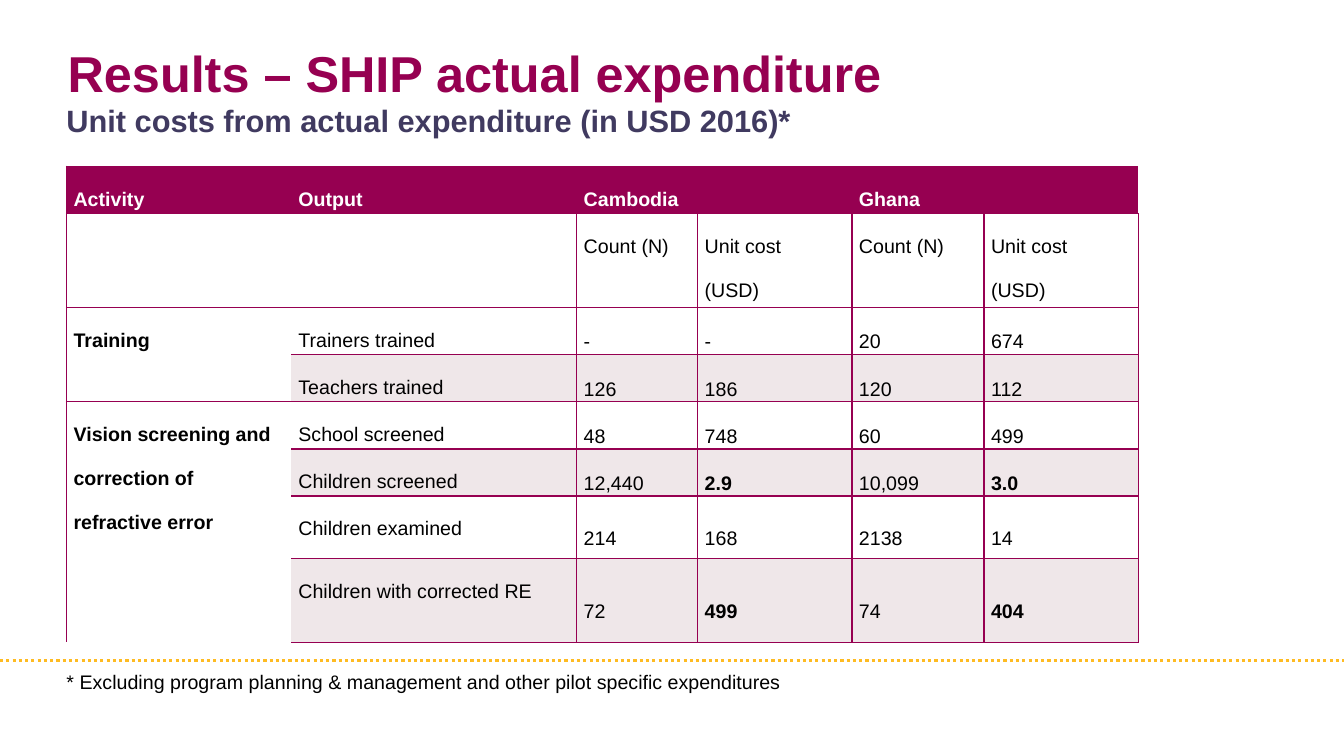
from pptx import Presentation
from pptx.dml.color import RGBColor
from pptx.enum.dml import MSO_LINE
from pptx.enum.shapes import MSO_CONNECTOR
from pptx.enum.text import MSO_ANCHOR as ANCHOR, PP_ALIGN
from pptx.oxml import parse_xml
from pptx.oxml.ns import nsdecls
from pptx.util import Inches, Pt

PLUM, WHITE, BLACK, PINK = "960051", "FFFFFF", "000000", "EFE7E9"


def rgb(value):
    return RGBColor.from_string(value)


def write(tf, text, size, color, bold=False, spacing=None):
    tf.word_wrap = True
    tf.text = text
    for p in tf.paragraphs:
        p.alignment = PP_ALIGN.LEFT
        p.line_spacing = spacing
        for r in p.runs:
            for name, value in {"name": "Arial", "size": Pt(size), "bold": bold}.items():
                setattr(r.font, name, value)
            r.font.color.rgb = rgb(color)


prs = Presentation()
prs.slide_width, prs.slide_height = Inches(13.33), Inches(7.5)
s = prs.slides.add_slide(prs.slide_layouts[5])

line = s.shapes.add_connector(MSO_CONNECTOR.STRAIGHT, 0, Inches(6.55), Inches(13.33), Inches(6.55))
line.line.color.rgb = rgb("FEBB22")
line.line.width = Pt(2.25)
line.line.dash_style = MSO_LINE.ROUND_DOT
line._element.spPr.append(parse_xml(f"<a:effectLst {nsdecls('a')}/>"))

texts = [
    (s.shapes.title, 0.67, 0.37, 0.7, "Results – SHIP actual expenditure", 36, PLUM, True),
    (None, 0.66, 0.98, 0.43, "Unit costs from actual expenditure (in USD 2016)*", 22, "403A60", True),
    (None, 0.66, 6.62, 0.29,
     "* Excluding program planning & management and other pilot specific expenditures", 14, BLACK, False),
]
for sp, left, top, height, text, size, color, bold in texts:
    sp = sp or s.shapes.add_textbox(0, 0, 0, 0)
    sp.left, sp.top, sp.width, sp.height = Inches(left), Inches(top), Inches(12), Inches(height)
    tf = sp.text_frame
    for side in ("left", "top", "right", "bottom"):
        setattr(tf, f"margin_{side}", 0)
    tf.vertical_anchor = ANCHOR.MIDDLE
    write(tf, text, size, color, bold)

rows = [
    ["Activity", "Output", "Cambodia", "", "Ghana", ""],
    ["", "", "Count (N)", "Unit cost\n(USD)", "Count (N)", "Unit cost\n(USD)"],
    ["Training", "Trainers trained", "-", "-", "20", "674"],
    ["", "Teachers trained", "126", "186", "120", "112"],
    ["Vision screening and correction of refractive error", "School screened", "48", "748", "60", "499"],
    ["", "Children screened", "12,440", "2.9", "10,099", "3.0"],
    ["", "Children examined", "214", "168", "2138", "14"],
    ["", "Children with corrected RE", "72", "499", "74", "404"],
]
widths = [2.23, 2.83, 1.2, 1.53, 1.31, 1.53]
heights = [0.46, 0.91, 0.46, 0.46, 0.46, 0.46, 0.62, 0.83]
bold_costs = {(r, c) for r in (5, 7) for c in (3, 5)}
merged_edges = {(r, 0) for r in (3, 5, 6, 7)}

table = s.shapes.add_table(8, 6, Inches(0.66), Inches(1.65), Inches(10.65), Inches(4.72)).table
table.first_row = table.horz_banding = False
for column, width in zip(table.columns, widths):
    column.width = Inches(width)
for row, height in zip(table.rows, heights):
    row.height = Inches(height)

for r, row in enumerate(rows):
    for c, text in enumerate(row):
        cell = table.cell(r, c)
        cell.margin_left = cell.margin_right = Inches(0.07)
        cell.margin_top = cell.margin_bottom = 0
        cell.vertical_anchor = ANCHOR.MIDDLE if r > 1 and c > 1 else ANCHOR.TOP
        bold = r == 0 or c == 0 or (r, c) in bold_costs
        write(cell.text_frame, text, 14, WHITE if r == 0 else BLACK, bold, 2.0)
        edges = {
            "L": c == 0 or (r > 0 and c > 1),
            "R": c == 5 or (r > 0 and c > 0),
            "T": (r, c) not in merged_edges,
            "B": (r + 1, c) not in merged_edges,
        }
        tcPr = cell._tc.get_or_add_tcPr()
        for side, drawn in edges.items():
            paint = f'<a:solidFill><a:srgbClr val="{PLUM}"/></a:solidFill>' if drawn else "<a:noFill/>"
            tcPr.append(parse_xml(f'<a:ln{side} {nsdecls("a")} w="12700">{paint}</a:ln{side}>'))
        cell.fill.solid()
        shaded = c > 0 and r > 2 and r % 2
        cell.fill.fore_color.rgb = rgb(PLUM if r == 0 else PINK if shaded else WHITE)

for first, last in [((0, 2), (0, 3)), ((0, 4), (0, 5)), ((2, 0), (3, 0)), ((4, 0), (7, 0))]:
    table.cell(*first).merge(table.cell(*last))

prs.save("out.pptx")
